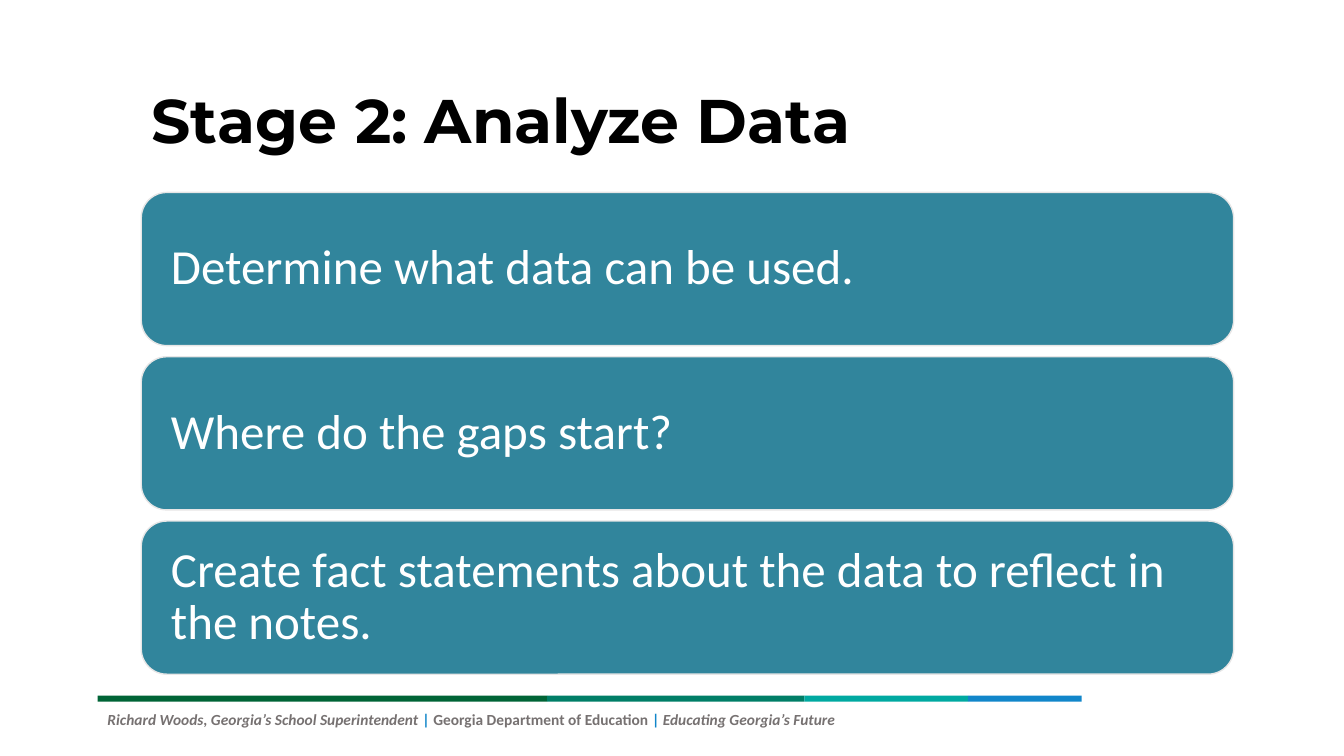
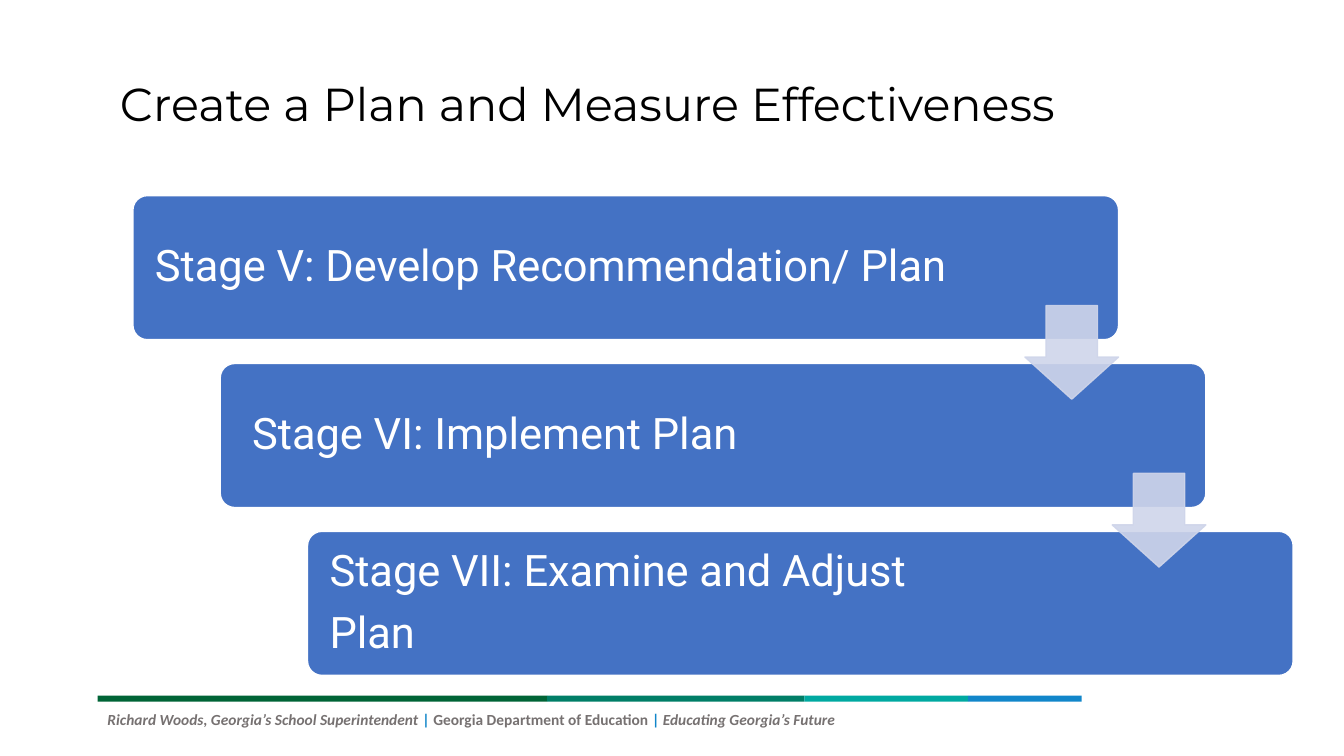
from pptx import Presentation
from pptx.dml.color import RGBColor
from pptx.enum.shapes import MSO_SHAPE
from pptx.enum.text import MSO_ANCHOR, MSO_AUTO_SIZE, PP_ALIGN
from pptx.oxml.ns import qn
from pptx.util import Cm, Pt
from lxml.etree import SubElement

BLACK, WHITE, GRAY = "000000", "FFFFFF", "767171"
TEAL, BLUE, PALE_BLUE, LIGHT_GRAY = "31859C", "4472C4", "CFD5EA", "E7E6E6"
ACCENT = "1186CA"
TITLE_FONT = "Montserrat"
BAND = [("006436", 11.33), ("007E67", 6.48), ("00A9A1", 4.13), (ACCENT, 2.86)]
BAND_LEFT, BAND_TOP, BAND_HEIGHT = 2.46, 17.53, 0.15
FOOTER = [
    ("Richard Woods, Georgia’s School Superintendent ", GRAY, True),
    ("|", ACCENT, False),
    (" Georgia Department of Education ", GRAY, False),
    ("| ", ACCENT, False),
    ("Educating Georgia’s Future", GRAY, True),
]


def rgb(color):
    return RGBColor.from_string(color)


def style_font(font, name, size, color, bold=False, italic=False):
    font.name = name
    font.size = Pt(size)
    font.color.rgb = rgb(color)
    font.bold = bold
    font.italic = italic


def add_block(s, kind, left, top, width, height, fill, line=None):
    sp = s.shapes.add_shape(kind, Cm(left), Cm(top), Cm(width), Cm(height))
    sp.shadow.inherit = False
    sp.fill.solid()
    sp.fill.fore_color.rgb = rgb(fill)
    if line:
        sp.line.color.rgb = rgb(line)
        sp.line.width = Pt(1)
    else:
        sp.line.fill.background()
    return sp


def set_text(sp, lines, font, size, left_inset, right_inset):
    tf = sp.text_frame
    tf.text = "\n".join(lines)
    tf.word_wrap = True
    tf.vertical_anchor = MSO_ANCHOR.MIDDLE
    tf.margin_left, tf.margin_right = Cm(left_inset), Cm(right_inset)
    for p in tf.paragraphs:
        p.alignment = PP_ALIGN.LEFT
        p.line_spacing = 0.9
        p.space_after = Pt(round(size * 0.35))
        style_font(p.runs[0].font, font, size, WHITE)


def add_footer(s):
    left = BAND_LEFT
    for color, width in BAND:
        add_block(s, MSO_SHAPE.RECTANGLE, left, BAND_TOP, width, BAND_HEIGHT, color)
        left += width
    box = s.shapes.add_textbox(Cm(BAND_LEFT), Cm(17.78), Cm(28), Cm(1.19))
    box.text_frame.word_wrap = True
    p = box.text_frame.paragraphs[0]
    for text, color, italic in FOOTER:
        r = p.add_run()
        r.text = text
        style_font(r.font, "Calibri", 11, color, True, italic)


def add_slide(prs, title, place, size, bold=False):
    s = prs.slides.add_slide(prs.slide_layouts[5])
    add_footer(s)
    sp = s.shapes.title
    sp.left, sp.top, sp.width, sp.height = map(Cm, place)
    tf = sp.text_frame
    tf.text = title
    tf.word_wrap = True
    tf.auto_size = MSO_AUTO_SIZE.NONE
    tf.vertical_anchor = MSO_ANCHOR.MIDDLE
    p = tf.paragraphs[0]
    p.alignment = PP_ALIGN.LEFT
    p.line_spacing = 0.9
    style_font(p.runs[0].font, TITLE_FONT, size, BLACK, bold)
    return s


def add_arrow(s, left, top, size):
    sp = add_block(s, MSO_SHAPE.DOWN_ARROW, left, top, size, size, PALE_BLUE, PALE_BLUE)
    sp.adjustments[0], sp.adjustments[1] = 0.55, 0.45
    for color in sp._element.spPr.iter(qn("a:srgbClr")):
        SubElement(color, qn("a:alpha"), val="90000")


def add_question_list(s, questions):
    for i, question in enumerate(questions):
        sp = add_block(s, MSO_SHAPE.ROUNDED_RECTANGLE, 3.56, 4.85 + 4.14 * i,
                       27.53, 3.86, TEAL, LIGHT_GRAY)
        set_text(sp, [question], "Calibri", 35, 0.56, 0.56)


def add_staircase(s, stages):
    left, top, width, height = 3.35, 4.93, 24.84, 3.63
    step_x, step_y, arrow = 2.2, 4.23, 2.36
    for i, (lines, inset) in enumerate(stages):
        sp = add_block(s, MSO_SHAPE.ROUNDED_RECTANGLE, left + step_x * i,
                       top + step_y * i, width, height, BLUE, WHITE)
        sp.adjustments[0] = 0.1
        set_text(sp, lines, "Roboto", 31, inset, 4.1)
    for i in range(len(stages) - 1):
        add_arrow(s, left + width - arrow + step_x * i, top + 2.77 + step_y * i, arrow)


def main():
    prs = Presentation()
    prs.slide_width, prs.slide_height = Cm(33.87), Cm(19.05)

    s = add_slide(prs, "Stage 2: Analyze Data", (3.56, 1.55, 24.33, 3.15), 44, True)
    add_question_list(s, [
        "Determine what data can be used.",
        "Where do the gaps start?",
        "Create fact statements about the data to reflect in the notes.",
    ])

    s = add_slide(prs, "Create a Plan and Measure Effectiveness",
                  (2.77, 0.84, 29.21, 3.68), 33)
    add_staircase(s, [
        (["Stage V: Develop Recommendation/ Plan"], 0.45),
        (["Stage VI: Implement Plan"], 0.7),
        (["Stage VII: Examine and Adjust", "Plan"], 0.45),
    ])

    prs.save("out.pptx")


if __name__ == "__main__":
    main()
